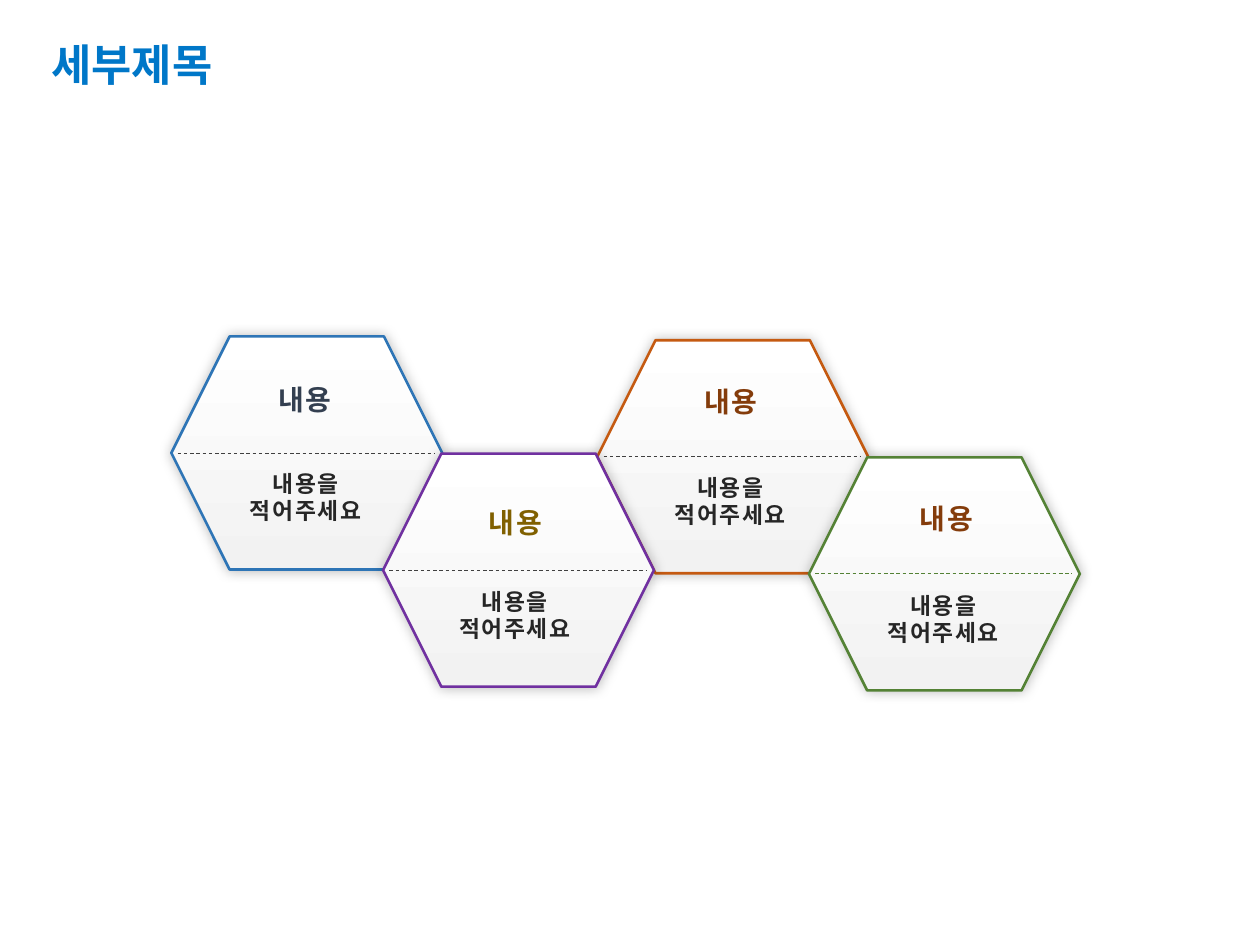
from dataclasses import dataclass

import lxml.etree
import pptx
import pptx.dml.color
import pptx.enum.dml
import pptx.enum.shapes
import pptx.enum.text
import pptx.oxml
import pptx.oxml.ns
import pptx.util
from pptx.util import Inches

COLORS = {
    "title": "0077C8", "top": "FFFFFF", "bottom": "F2F2F2",
    "shadow": "000000", "body": "262626", "gray": "404040",
    "orange": "C55A11", "blue": "2E75B6", "purple": "7030A0",
    "green": "548235", "brown": "843C0B", "navy": "333F50", "gold": "806000",
}
FONT = "Noto Sans CJK KR"
HEX_W, HEX_H = 2.15, 1.85
HEADING_W, HEADING_H = 1.72, 0.35
BODY_W, BODY_H = 1.55, 0.54
DIVIDER_W = 2.04


@dataclass
class Hexagon:
    left: float
    top: float
    outline: str
    divider: str
    heading_color: str
    heading_at: tuple[float, float]
    body_at: tuple[float, float]


HEXAGONS = [
    Hexagon(4.74, 2.7, "orange", "gray", "brown", (4.94, 3.02), (5.02, 3.71)),
    Hexagon(1.36, 2.67, "blue", "gray", "navy", (1.56, 3), (1.65, 3.68)),
    Hexagon(3.04, 3.6, "purple", "gray", "gold", (3.23, 3.98), (3.31, 4.62)),
    Hexagon(6.42, 3.63, "green", "green", "brown", (6.65, 3.95), (6.71, 4.65)),
]


def rgb(name: str) -> pptx.dml.color.RGBColor:
    return pptx.dml.color.RGBColor.from_string(COLORS[name])


def add_glow_shadow(sp) -> None:
    ns = pptx.oxml.ns.nsdecls("a")
    sp._element.spPr.append(pptx.oxml.parse_xml(
        f'<a:effectLst {ns}><a:outerShdw blurRad="{pptx.util.Pt(7)}" dist="0" dir="0" '
        f'algn="ctr" rotWithShape="0"><a:srgbClr val="{COLORS["shadow"]}">'
        '<a:alpha val="25000"/></a:srgbClr></a:outerShdw></a:effectLst>'))


def add_text(s, at: tuple[float, float], size: tuple[float, float], lines: list[str],
             points: float, color: str, spacing: float) -> None:
    box = s.shapes.add_textbox(*(Inches(v) for v in (*at, *size)))
    tf = box.text_frame
    tf.word_wrap = True
    for i, line in enumerate(lines):
        p = tf.add_paragraph() if i else tf.paragraphs[0]
        p.alignment = pptx.enum.text.PP_ALIGN.CENTER
        p.line_spacing = pptx.util.Pt(spacing)
        r = p.add_run()
        r.text = line
        r.font.size = pptx.util.Pt(points)
        r.font.bold = True
        r.font.name = FONT
        r.font.color.rgb = rgb(color)
        props = r.font._element
        props.set("spc", "100")
        ea = lxml.etree.SubElement(props, pptx.oxml.ns.qn("a:ea"))
        ea.set("typeface", FONT)


def add_hexagon(s, item: Hexagon) -> None:
    sp = s.shapes.add_shape(
        pptx.enum.shapes.MSO_SHAPE.HEXAGON,
        *(Inches(v) for v in (item.left, item.top, HEX_W, HEX_H)))
    sp.fill.gradient()
    sp.fill.gradient_angle = 270
    for stop, name in zip(sp.fill.gradient_stops, ("top", "bottom")):
        stop.color.rgb = rgb(name)
    sp.line.color.rgb = rgb(item.outline)
    sp.line.width = pptx.util.Pt(1.5)
    add_glow_shadow(sp)

    x, y = item.left + 0.05, item.top + HEX_H / 2
    divider = s.shapes.add_connector(
        pptx.enum.shapes.MSO_CONNECTOR.STRAIGHT,
        Inches(x), Inches(y), Inches(x + DIVIDER_W), Inches(y))
    divider.line.color.rgb = rgb(item.divider)
    divider.line.width = pptx.util.Pt(0.5)
    divider.line.dash_style = pptx.enum.dml.MSO_LINE.DASH
    lxml.etree.SubElement(divider._element.spPr, pptx.oxml.ns.qn("a:effectLst"))

    add_text(s, item.heading_at, (HEADING_W, HEADING_H), ["내용"],
             16, item.heading_color, 18)
    add_text(s, item.body_at, (BODY_W, BODY_H), ["내용을", "적어주세요"],
             13, "body", 15.5)


def add_title(s) -> None:
    title = s.shapes.title
    title.left, title.top, title.width, title.height = (
        Inches(v) for v in (0.31, 0.17, 8.49, 0.73))
    tf = title.text_frame
    tf.vertical_anchor = pptx.enum.text.MSO_ANCHOR.MIDDLE
    p = tf.paragraphs[0]
    p.alignment = pptx.enum.text.PP_ALIGN.LEFT
    p.line_spacing = 0.9
    r = p.add_run()
    r.text = "세부제목"
    r.font.size = pptx.util.Pt(25)
    r.font.bold = True
    r.font.name = "Calibri"
    r.font.color.rgb = rgb("title")


def main() -> None:
    prs = pptx.Presentation()
    prs.slide_width, prs.slide_height = Inches(10), Inches(7.5)
    s = prs.slides.add_slide(prs.slide_layouts[5])
    add_title(s)
    for item in HEXAGONS:
        add_hexagon(s, item)
    prs.save("out.pptx")


if __name__ == "__main__":
    main()
